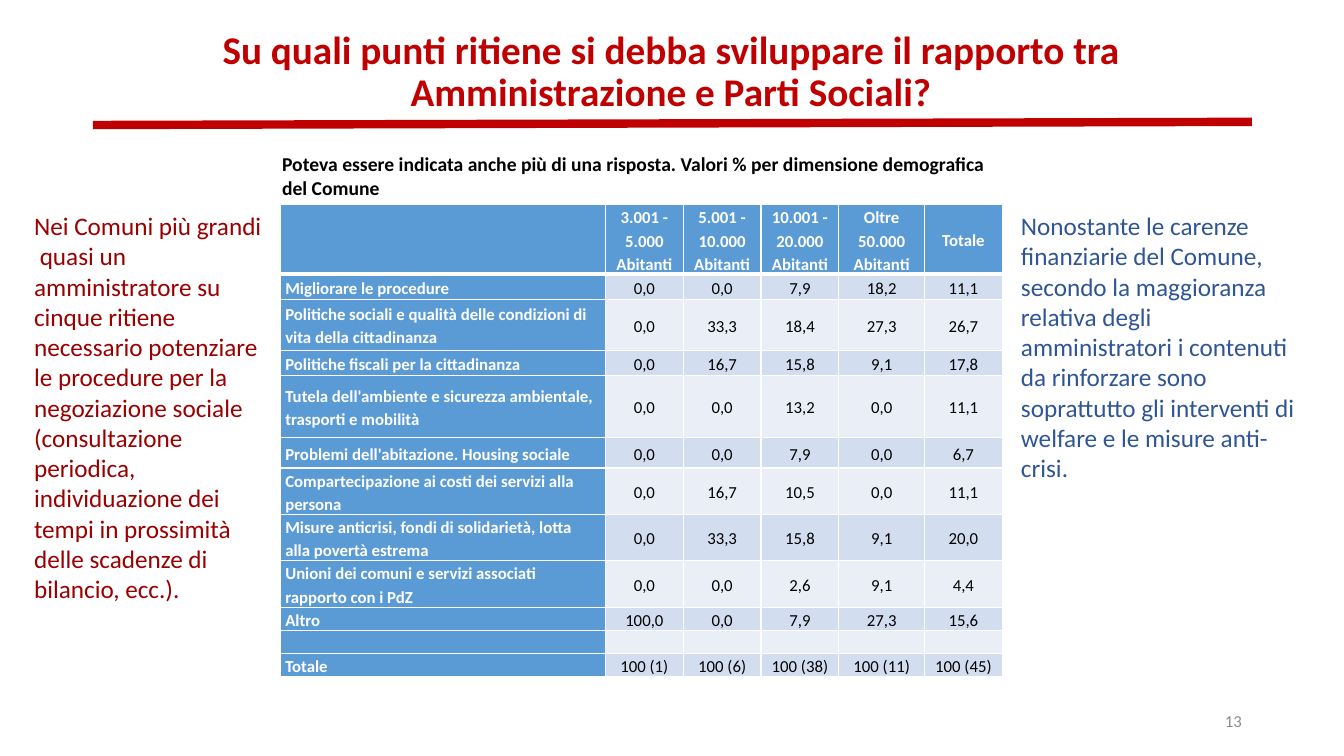
"""Slide on the points to develop between the administration and the social partners."""
from lxml import etree
from pptx import Presentation
from pptx import util as u
from pptx.dml.color import RGBColor
from pptx.enum import shapes, text
from pptx.oxml import ns

COLORS = {
    "red": "C00000", "dark_red": "9A0000", "navy": "2F5597", "gray": "8C8C8C",
    "black": "000000", "white": "FFFFFF", "header": "5B9BD5",
    "odd_row": "D2DEEF", "even_row": "EAEFF7",
}
LEFT, CENTER, RIGHT = text.PP_ALIGN.LEFT, text.PP_ALIGN.CENTER, text.PP_ALIGN.RIGHT
TOP, MIDDLE = text.MSO_ANCHOR.TOP, text.MSO_ANCHOR.MIDDLE
FIXED, GROW = text.MSO_AUTO_SIZE.NONE, text.MSO_AUTO_SIZE.SHAPE_TO_FIT_TEXT


def write(para, words, size, color, bold=False, align=LEFT, spacing=None):
    """Put one formatted run into a paragraph."""
    para.alignment = align
    para.line_spacing = spacing
    span = para.add_run()
    span.text = words
    span.font.color.rgb = RGBColor.from_string(COLORS[color])
    formats = {"name": "Calibri", "size": u.Pt(size), "bold": bold}
    for name, value in formats.items():
        setattr(span.font, name, value)


def add_borders(cell, bottom_width):
    """Draw white borders around a table cell."""
    properties = cell._tc.get_or_add_tcPr()
    for side in ("lnL", "lnR", "lnT", "lnB"):
        width = bottom_width if side == "lnB" else 1
        line = etree.SubElement(properties, ns.qn(f"a:{side}"), w=str(u.Pt(width)))
        fill = etree.SubElement(line, ns.qn("a:solidFill"))
        etree.SubElement(fill, ns.qn("a:srgbClr"), val=COLORS["white"])


deck = Presentation()
deck.slide_width, deck.slide_height = u.Cm(33.87), u.Cm(19.05)
page = deck.slides.add_slide(deck.slide_layouts[5])

rule = page.shapes.add_connector(
    shapes.MSO_CONNECTOR.STRAIGHT, u.Cm(2.34), u.Cm(3.15), u.Cm(31.55), u.Cm(3.07))
rule.line.color.rgb = RGBColor.from_string(COLORS["red"])
rule.line.width = u.Pt(6)
etree.SubElement(rule._element.spPr, ns.qn("a:effectLst"))

title = page.shapes.title
texts = [
    (title, (4.6, 0.46, 24.61, 2.74), MIDDLE, FIXED,
     "Su quali punti ritiene si debba sviluppare il rapporto tra Amministrazione e Parti Sociali?",
     (28, "red", True, CENTER, 0.9)),
    (None, (0.61, 5.18, 6.25, 10.26), TOP, GROW,
     "Nei Comuni più grandi  quasi un amministratore su cinque ritiene necessario potenziare "
     "le procedure per la negoziazione sociale (consultazione periodica, individuazione dei "
     "tempi in prossimità delle scadenze di bilancio, ecc.).",
     (18, "dark_red")),
    (None, (6.86, 3.71, 18.62, 1.45), TOP, GROW,
     "Poteva essere indicata anche più di una risposta. "
     "Valori % per dimensione demografica del Comune",
     (14, "black", True)),
    (None, (25.48, 5.18, 7.47, 7.19), TOP, GROW,
     "Nonostante le carenze finanziarie del Comune, secondo la maggioranza relativa degli "
     "amministratori i contenuti da rinforzare sono soprattutto gli interventi di welfare "
     "e le misure anti-crisi.",
     (18, "navy")),
    (None, (23.93, 17.65, 7.62, 1.02), MIDDLE, FIXED, "13", (12, "gray", False, RIGHT)),
]
for box, place, anchor, fit, words, style in texts:
    left, top, width, height = map(u.Cm, place)
    box = box or page.shapes.add_textbox(left, top, width, height)
    places = {"left": left, "top": top, "width": width, "height": height}
    for name, value in places.items():
        setattr(box, name, value)
    frame_formats = {"word_wrap": True, "auto_size": fit, "vertical_anchor": anchor}
    for name, value in frame_formats.items():
        setattr(box.text_frame, name, value)
    write(box.text_frame.paragraphs[0], words, *style)

rows = [
    (1.75, "", "3.001 - 5.000 Abitanti", "5.001 - 10.000 Abitanti",
     "10.001 - 20.000 Abitanti", "Oltre 50.000 Abitanti", "Totale"),
    (0.64, "Migliorare le procedure", "0,0", "0,0", "7,9", "18,2", "11,1"),
    (1.27, "Politiche sociali e qualità delle condizioni di vita della cittadinanza",
     "0,0", "33,3", "18,4", "27,3", "26,7"),
    (0.64, "Politiche fiscali per la cittadinanza", "0,0", "16,7", "15,8", "9,1", "17,8"),
    (1.57, "Tutela dell'ambiente e sicurezza ambientale, trasporti e mobilità",
     "0,0", "0,0", "13,2", "0,0", "11,1"),
    (0.76, "Problemi dell'abitazione. Housing sociale", "0,0", "0,0", "7,9", "0,0", "6,7"),
    (1.17, "Compartecipazione ai costi dei servizi alla persona",
     "0,0", "16,7", "10,5", "0,0", "11,1"),
    (1.17, "Misure anticrisi, fondi di solidarietà, lotta alla povertà estrema",
     "0,0", "33,3", "15,8", "9,1", "20,0"),
    (1.17, "Unioni dei comuni e servizi associati rapporto con i PdZ",
     "0,0", "0,0", "2,6", "9,1", "4,4"),
    (0.58, "Altro", "100,0", "0,0", "7,9", "27,3", "15,6"),
    (0.58, "", "", "", "", "", ""),
    (0.58, "Totale", "100 (1)", "100 (6)", "100 (38)", "100 (11)", "100 (45)"),
]
widths = [8.2, 1.96, 1.96, 1.96, 2.16, 1.96]
table = page.shapes.add_table(
    len(rows), len(widths), u.Cm(7.06), u.Cm(5.16),
    u.Cm(sum(widths)), u.Cm(sum(row[0] for row in rows))).table
for column, width in zip(table.columns, widths):
    column.width = u.Cm(width)

cell_formats = {
    "margin_left": u.Cm(0.13), "margin_right": u.Cm(0.13),
    "margin_top": 0, "margin_bottom": 0, "vertical_anchor": MIDDLE,
}
for row_index, (height, *values) in enumerate(rows):
    table.rows[row_index].height = u.Cm(height)
    for column_index, value in enumerate(values):
        cell = table.cell(row_index, column_index)
        heading = row_index == 0 or column_index == 0
        band = "odd_row" if row_index % 2 else "even_row"
        for name, setting in cell_formats.items():
            setattr(cell, name, setting)
        add_borders(cell, 1 if row_index else 3)
        cell.fill.solid()
        cell.fill.fore_color.rgb = RGBColor.from_string(COLORS["header" if heading else band])
        para = cell.text_frame.paragraphs[0]
        if value:
            write(para, value, 12, "white" if heading else "black", heading,
                  CENTER if column_index else LEFT, 1.15)
        else:
            para._p.get_or_add_endParaRPr().set("sz", "1200")

deck.save("out.pptx")
